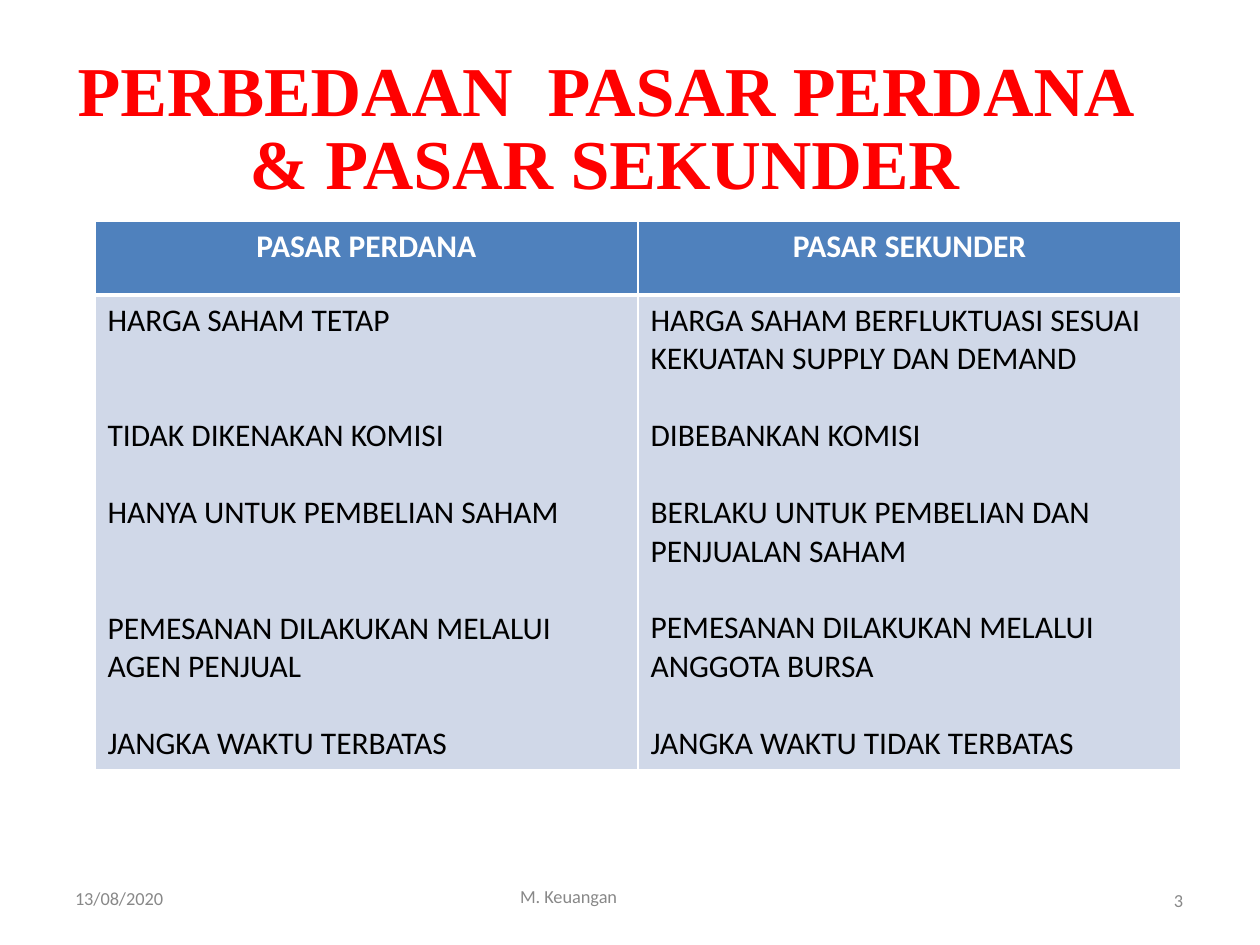
from dataclasses import dataclass

from lxml.etree import SubElement
from pptx import Presentation
from pptx.dml.color import RGBColor
from pptx.enum.text import MSO_ANCHOR, MSO_AUTO_SIZE, PP_ALIGN
from pptx.oxml.ns import qn
from pptx.util import Emu, Pt

PX_PER_INCH = 126
LINE_HEIGHT = 22  # points, one line of 18 pt table text


def px(length: int) -> Emu:
    return Emu(round(length * 914400 / PX_PER_INCH))


def color(value: str) -> RGBColor:
    return RGBColor.from_string(value)


@dataclass
class Style:
    font: str
    size: float
    color: str
    bold: bool = False


@dataclass
class Box:
    left: int
    top: int
    width: int
    height: int


@dataclass
class FooterItem:
    text: str
    box: Box


@dataclass
class Point:
    text: str
    gap_lines: int = 1


@dataclass
class Column:
    heading: str
    points: list[Point]


TITLE = "PERBEDAAN  PASAR PERDANA & PASAR SEKUNDER"
TITLE_BOX = Box(43, 57, 1123, 179)
TITLE_STYLE = Style("Times New Roman", 40, "FF0000", True)
HEADING_STYLE = Style("Calibri", 18, "FFFFFF", True)
POINT_STYLE = Style("Calibri", 18, "000000")
FOOTER_STYLE = Style("Calibri", 10.5, "888888")

TABLE_BOX = Box(95, 221, 1086, 547)
HEADING_HEIGHT = 74
COLUMNS = [
    Column("PASAR PERDANA", [
        Point("HARGA SAHAM TETAP", 0),
        Point("TIDAK DIKENAKAN KOMISI", 2),
        Point("HANYA UNTUK PEMBELIAN SAHAM"),
        Point("PEMESANAN DILAKUKAN MELALUI AGEN PENJUAL", 2),
        Point("JANGKA WAKTU TERBATAS"),
    ]),
    Column("PASAR SEKUNDER", [
        Point("HARGA SAHAM BERFLUKTUASI SESUAI KEKUATAN SUPPLY DAN DEMAND", 0),
        Point("DIBEBANKAN KOMISI"),
        Point("BERLAKU UNTUK PEMBELIAN DAN PENJUALAN SAHAM"),
        Point("PEMESANAN DILAKUKAN MELALUI ANGGOTA BURSA"),
        Point("JANGKA WAKTU TIDAK TERBATAS"),
    ]),
]
FOOTER = [
    FooterItem("M. Keuangan", Box(520, 884, 118, 24)),
    FooterItem("13/08/2020", Box(75, 886, 107, 24)),
    FooterItem("3", Box(1174, 888, 18, 24)),
]


def add_run(paragraph, text: str, style: Style) -> None:
    run = paragraph.add_run()
    run.text = text
    run.font.name = style.font
    run.font.size = Pt(style.size)
    run.font.bold = style.bold
    run.font.color.rgb = color(style.color)


def prepare_frame(text_frame) -> None:
    """Make the text start at the top left corner of its box and wrap."""
    text_frame.word_wrap = True
    text_frame.auto_size = MSO_AUTO_SIZE.NONE
    text_frame.vertical_anchor = MSO_ANCHOR.TOP
    text_frame.margin_left = text_frame.margin_right = 0
    text_frame.margin_top = text_frame.margin_bottom = 0


def add_title(slide) -> None:
    title = slide.shapes.title
    title.left, title.top = px(TITLE_BOX.left), px(TITLE_BOX.top)
    title.width, title.height = px(TITLE_BOX.width), px(TITLE_BOX.height)
    prepare_frame(title.text_frame)
    paragraph = title.text_frame.paragraphs[0]
    paragraph.alignment = PP_ALIGN.CENTER
    paragraph.line_spacing = Pt(41.8)
    paragraph.space_before = Pt(2.1)
    add_run(paragraph, TITLE, TITLE_STYLE)


def add_footer_item(slide, item: FooterItem) -> None:
    box = item.box
    shape = slide.shapes.add_textbox(px(box.left), px(box.top), px(box.width), px(box.height))
    prepare_frame(shape.text_frame)
    paragraph = shape.text_frame.paragraphs[0]
    paragraph.line_spacing = Pt(13.2)
    paragraph.space_before = Pt(0.7)
    add_run(paragraph, item.text, FOOTER_STYLE)


def format_cell(cell, fill: str, top: int, bottom: int) -> None:
    """Set white borders, with top and bottom widths in points, and the fill."""
    properties = cell._tc.get_or_add_tcPr()
    for side, width in (("L", 1), ("R", 1), ("T", top), ("B", bottom)):
        line = SubElement(properties, qn(f"a:ln{side}"), w=str(Pt(width)))
        line_fill = SubElement(line, qn("a:solidFill"))
        SubElement(line_fill, qn("a:srgbClr"), val="FFFFFF")
    cell.fill.solid()
    cell.fill.fore_color.rgb = color(fill)


def add_comparison_table(slide) -> None:
    box = TABLE_BOX
    table = slide.shapes.add_table(
        2, len(COLUMNS), px(box.left), px(box.top), px(box.width), px(box.height)
    ).table
    table.rows[0].height = px(HEADING_HEIGHT)
    table.rows[1].height = px(box.height - HEADING_HEIGHT)
    for index, column in enumerate(COLUMNS):
        table.columns[index].width = px(box.width // len(COLUMNS))

        heading = table.cell(0, index)
        format_cell(heading, "4F81BD", top=1, bottom=3)
        paragraph = heading.text_frame.paragraphs[0]
        paragraph.alignment = PP_ALIGN.CENTER
        add_run(paragraph, column.heading, HEADING_STYLE)

        body = table.cell(1, index)
        format_cell(body, "D0D8E8", top=3, bottom=1)
        for number, point in enumerate(column.points):
            text_frame = body.text_frame
            paragraph = text_frame.add_paragraph() if number else text_frame.paragraphs[0]
            paragraph.space_before = Pt(point.gap_lines * LINE_HEIGHT)
            add_run(paragraph, point.text, POINT_STYLE)


def main() -> None:
    presentation = Presentation()
    presentation.slide_width = px(1260)
    presentation.slide_height = px(945)
    slide = presentation.slides.add_slide(presentation.slide_layouts.get_by_name("Title Only"))
    add_title(slide)
    for item in FOOTER:
        add_footer_item(slide, item)
    add_comparison_table(slide)
    presentation.save("out.pptx")


if __name__ == "__main__":
    main()
